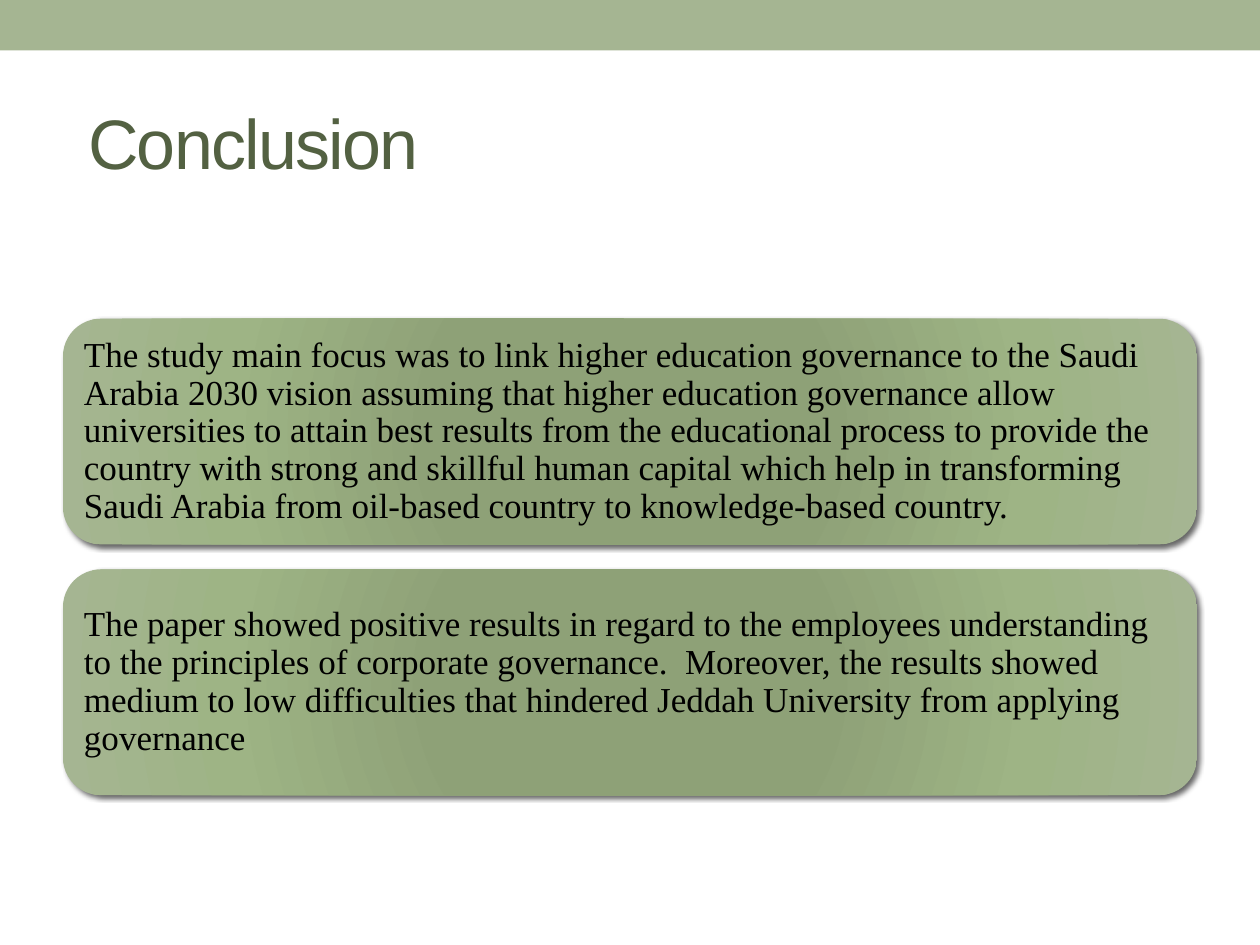
from lxml import etree
from pptx import Presentation
from pptx.dml.color import RGBColor
from pptx.enum.shapes import MSO_SHAPE
from pptx.enum.text import MSO_ANCHOR, PP_ALIGN
from pptx.oxml import parse_xml
from pptx.oxml.ns import nsdecls, qn
from pptx.util import Inches, Pt

FINDINGS = [
    "The study main focus was to link higher education governance to the Saudi "
    "Arabia 2030 vision assuming that higher education governance allow "
    "universities to attain best results from the educational process to provide "
    "the country with strong and skillful human capital which help in transforming "
    "Saudi Arabia from oil-based country to knowledge-based country.",
    "The paper showed positive results in regard to the employees understanding "
    "to the principles of corporate governance.  Moreover, the results showed "
    "medium to low difficulties that hindered Jeddah University from applying "
    "governance",
]


def color(hex_code):
    return RGBColor.from_string(hex_code)


class ConclusionSlide:
    GREEN = "A5B592"
    TITLE_GREEN = "536142"
    PANEL_STOPS = [(0, "8EA276"), (34, "8EA177"), (70, "9EB485"), (100, GREEN)]

    def __init__(self, presentation):
        self.slide = presentation.slides.add_slide(presentation.slide_layouts[5])

    def format_text(self, frame, text, font, size, hex_code):
        frame.text = text
        frame.word_wrap = True
        frame.vertical_anchor = MSO_ANCHOR.MIDDLE
        paragraph = frame.paragraphs[0]
        paragraph.alignment = PP_ALIGN.LEFT
        run = paragraph.runs[0]
        run.font.name = font
        run.font.size = Pt(size)
        run.font.color.rgb = color(hex_code)
        return paragraph, run

    def add_shape(self, preset, left, top, width, height):
        shape = self.slide.shapes.add_shape(
            preset, Inches(left), Inches(top), Inches(width), Inches(height))
        shape.shadow.inherit = False
        shape.line.fill.background()
        return shape

    def add_band(self, width, height):
        band = self.add_shape(MSO_SHAPE.RECTANGLE, 0, 0, width, height)
        band.fill.solid()
        band.fill.fore_color.rgb = color(self.GREEN)

    def set_title(self, text, left, top, width, height):
        title = self.slide.shapes.title
        title.left, title.top = Inches(left), Inches(top)
        title.width, title.height = Inches(width), Inches(height)
        title.text_frame.margin_left = Inches(0.2)
        _, run = self.format_text(title.text_frame, text, "Arial", 40, self.TITLE_GREEN)
        run.font._element.set("spc", "-100")

    def add_panel(self, text, left, top, width, height):
        panel = self.add_shape(MSO_SHAPE.ROUNDED_RECTANGLE, left, top, width, height)
        self.apply_radial_fill(panel)
        self.apply_shadow(panel)
        frame = panel.text_frame
        frame.margin_left = frame.margin_right = Inches(0.08)
        frame.margin_top = frame.margin_bottom = Inches(0.08)
        paragraph, _ = self.format_text(frame, text, "Times New Roman", 20, "000000")
        paragraph.line_spacing = 0.9

    def apply_radial_fill(self, shape):
        stops = "".join(
            f'<a:gs pos="{percent * 1000}"><a:srgbClr val="{hex_code}"/></a:gs>'
            for percent, hex_code in self.PANEL_STOPS)
        gradient = parse_xml(
            f'<a:gradFill {nsdecls("a")} rotWithShape="1"><a:gsLst>{stops}</a:gsLst>'
            '<a:path path="circle"><a:fillToRect l="100000" t="100000" '
            'r="100000" b="100000"/></a:path></a:gradFill>')
        shape._element.spPr.find(qn("a:prstGeom")).addnext(gradient)

    def apply_shadow(self, shape):
        effects = shape._element.spPr.find(qn("a:effectLst"))
        shadow = etree.SubElement(
            effects, qn("a:outerShdw"), blurRad=str(Pt(3)), dist=str(Pt(2)),
            dir=str(45 * 60000), rotWithShape="0")
        black = etree.SubElement(shadow, qn("a:srgbClr"), val="000000")
        etree.SubElement(black, qn("a:alpha"), val="60000")


def main():
    presentation = Presentation()
    presentation.slide_width = Inches(10)
    presentation.slide_height = Inches(7.5)

    conclusion = ConclusionSlide(presentation)
    conclusion.add_band(10, 0.4)
    conclusion.set_title("Conclusion", 0.5, 0.58, 9, 1.08)
    panel_height, gap = 1.79, 0.2
    for row, finding in enumerate(FINDINGS):
        top = 2.53 + row * (panel_height + gap)
        conclusion.add_panel(finding, 0.5, top, 9, panel_height)

    presentation.save("out.pptx")


if __name__ == "__main__":
    main()
